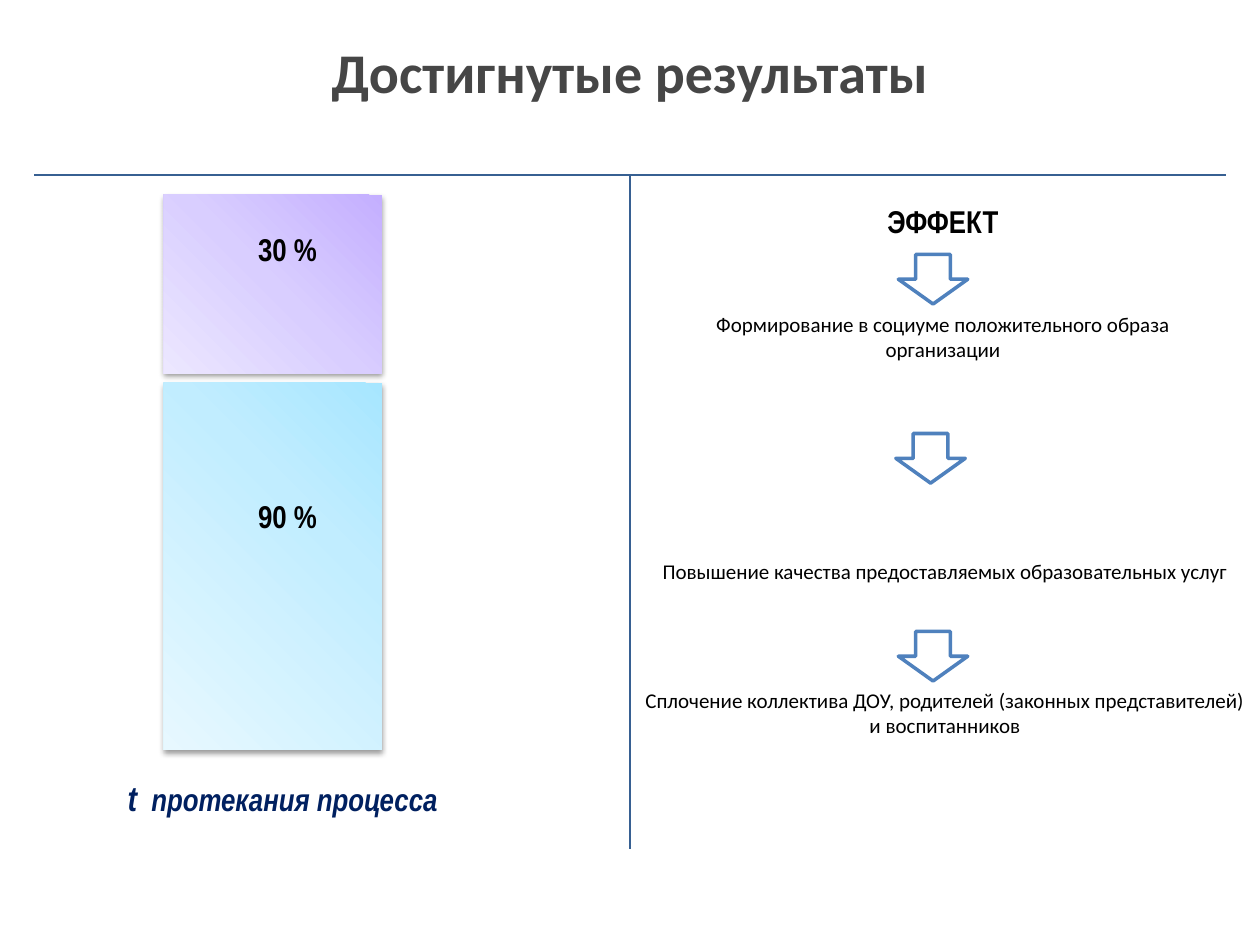
from copy import deepcopy
from dataclasses import dataclass

from lxml import etree
from pptx import Presentation
from pptx import util as u
from pptx.dml.color import RGBColor
from pptx.enum import shapes, text
from pptx.oxml import ns
from pptx.util import Cm

BLACK = RGBColor(0x00, 0x00, 0x00)
WHITE = RGBColor(0xFF, 0xFF, 0xFF)
GREY = RGBColor(0x46, 0x46, 0x46)
NAVY = RGBColor(0x00, 0x20, 0x60)
RULE_BLUE = RGBColor(0x37, 0x60, 0x92)
ARROW_BLUE = RGBColor(0x4F, 0x81, 0xBD)
CYANS = (RGBColor(0xA7, 0xE6, 0xFF), RGBColor(0xC1, 0xED, 0xFF), RGBColor(0xE7, 0xF8, 0xFF))
VIOLETS = (RGBColor(0xC4, 0xAF, 0xFF), RGBColor(0xD9, 0xCE, 0xFF), RGBColor(0xEC, 0xE7, 0xFF))

TITLE = {"name": "Calibri", "size": u.Pt(32), "bold": True, "color": GREY}
HEAD = {"name": "Arial Narrow", "size": u.Pt(18), "bold": True, "color": BLACK}
BODY = {"name": "Calibri", "size": u.Pt(12), "bold": False, "color": BLACK}
CAPTION = HEAD | {"italic": True, "color": NAVY}
SYMBOL = CAPTION | {"size": u.Pt(20)}


@dataclass
class Run:
    text: str
    font: dict
    spacing: int = 0  # hundredths of a point after each letter


@dataclass
class Label:
    box: tuple[float, float, float, float]
    paragraphs: list[list[Run]]
    gap: float = 0  # points between paragraphs
    grow: bool = True


@dataclass
class Bar:
    top: float
    height: float
    colors: tuple[RGBColor, ...]
    middle: float


# All lengths in centimetres
BAR_LEFT, BAR_WIDTH = 3.3, 4.4
BARS = [Bar(7.72, 7.4, CYANS, 0.35), Bar(3.93, 3.6, VIOLETS, 0.5)]
RULES = [(0.69, 3.53, 24.71, 3.53), (12.7, 3.53, 12.7, 17.12)]
ARROWS = [(18.11, 5.13), (18.06, 8.74), (18.11, 12.73)]
LABELS = [
    Label((0.3, 0.53, 24.8, 1.8), [[Run("Достигнутые результаты", TITLE)]], grow=False),
    Label((13.31, 3.94, 11.4, 4.11),
          [[Run("ЭФФЕКТ", HEAD)],
           [Run("Формирование в социуме положительного образа организации", BODY)]], gap=41),
    Label((3.89, 4.52, 3.81, 1.02), [[Run("30 %", HEAD)]]),
    Label((3.89, 9.9, 3.81, 1.02), [[Run("90 %", HEAD)]]),
    Label((1.9, 15.52, 7.6, 1.12),
          [[Run("t", SYMBOL, 400), Run(" протекания процесса", CAPTION)]]),
    Label((12.7, 11.13, 12.7, 0.76),
          [[Run("Повышение качества предоставляемых образовательных услуг", BODY)]]),
    Label((12.7, 13.74, 12.7, 1.27),
          [[Run("Сплочение коллектива ДОУ, родителей (законных представителей) "
                "и воспитанников", BODY)]]),
]


def add_bar(s, bar: Bar) -> None:
    sp = s.shapes.add_shape(shapes.MSO_SHAPE.RECTANGLE, Cm(BAR_LEFT), Cm(bar.top),
                            Cm(BAR_WIDTH), Cm(bar.height))
    sp.line.fill.background()
    sp.fill.gradient()
    sp.fill.gradient_angle = 225
    stops = sp._element.spPr.find(".//" + ns.qn("a:gsLst"))
    stops.append(deepcopy(stops[0]))
    for stop, color, position in zip(sp.fill.gradient_stops, bar.colors, (0, bar.middle, 1)):
        stop.color.rgb = color
        stop.position = position
    # Soft shadow straight below
    sp.shadow.inherit = False
    effects = sp._element.spPr.find(ns.qn("a:effectLst"))
    shadow = etree.SubElement(effects, ns.qn("a:outerShdw"), blurRad=str(u.Pt(3.1)),
                              dist=str(u.Pt(1.6)), dir="5400000", rotWithShape="0")
    tint = etree.SubElement(shadow, ns.qn("a:srgbClr"), val=str(BLACK))
    etree.SubElement(tint, ns.qn("a:alpha"), val="38000")


def add_rule(s, ends: tuple[float, float, float, float]) -> None:
    line = s.shapes.add_connector(shapes.MSO_CONNECTOR.STRAIGHT, *map(Cm, ends))
    line.line.color.rgb = RULE_BLUE
    line.line.width = u.Pt(1.5)
    etree.SubElement(line._element.spPr, ns.qn("a:effectLst"))


def add_arrow(s, left: float, top: float) -> None:
    sp = s.shapes.add_shape(shapes.MSO_SHAPE.DOWN_ARROW, Cm(left), Cm(top), Cm(1.4), Cm(1))
    sp.shadow.inherit = False
    sp.fill.solid()
    sp.fill.fore_color.rgb = WHITE
    sp.line.color.rgb = ARROW_BLUE
    sp.line.width = u.Pt(2)


def add_label(s, label: Label) -> None:
    tf = s.shapes.add_textbox(*map(Cm, label.box)).text_frame
    tf.word_wrap = True
    if label.grow:
        tf.auto_size = text.MSO_AUTO_SIZE.SHAPE_TO_FIT_TEXT
    else:
        tf.vertical_anchor = text.MSO_ANCHOR.MIDDLE
    for i, runs in enumerate(label.paragraphs):
        p = tf.add_paragraph() if i else tf.paragraphs[0]
        p.alignment = text.PP_ALIGN.CENTER
        if i:
            p.space_before = u.Pt(label.gap)
        for run in runs:
            r = p.add_run()
            r.text = run.text
            for key, value in run.font.items():
                if key == "color":
                    r.font.color.rgb = value
                else:
                    setattr(r.font, key, value)
            if run.spacing:
                r._r.get_or_add_rPr().set("spc", str(run.spacing))


def main() -> None:
    prs = Presentation()
    prs.slide_width, prs.slide_height = Cm(25.4), Cm(19.05)
    s = prs.slides.add_slide(prs.slide_layouts[6])

    # Stacked bars on the left
    for bar in BARS:
        add_bar(s, bar)
    # Dividing lines
    for ends in RULES:
        add_rule(s, ends)
    # Chain of effects on the right
    for left, top in ARROWS:
        add_arrow(s, left, top)
    # Title, headings and captions
    for label in LABELS:
        add_label(s, label)

    prs.save("out.pptx")


if __name__ == "__main__":
    main()
